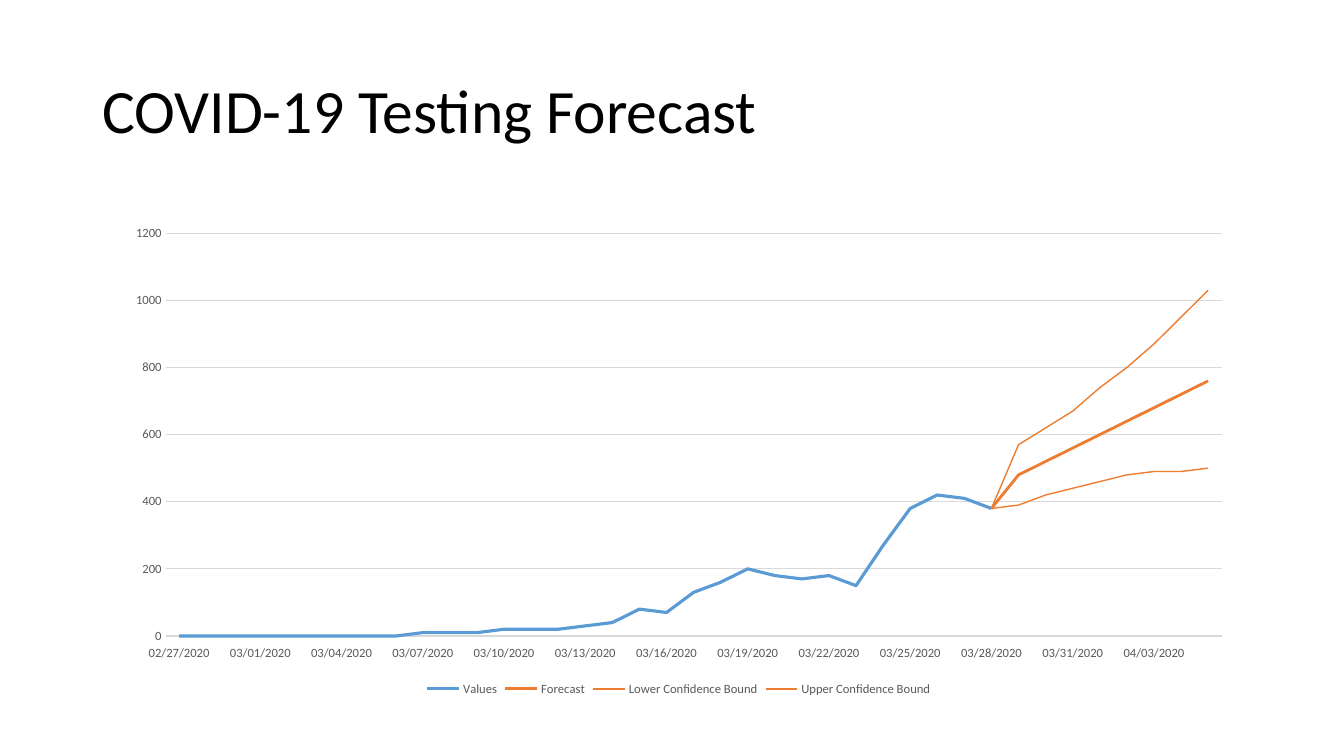
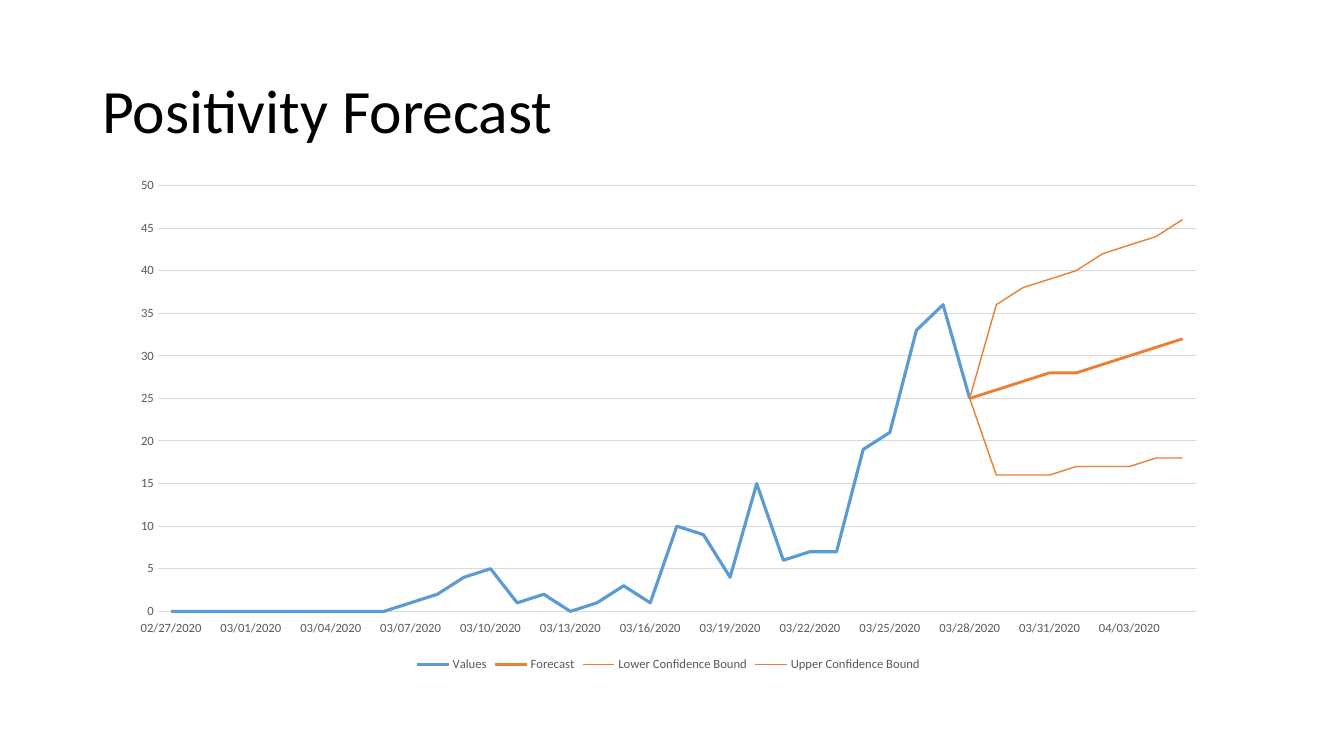
import pptx
import pptx.chart.data
import pptx.dml.color
import pptx.enum.chart
import pptx.enum.text
import pptx.oxml
import pptx.oxml.ns
import pptx.util

PX = 9525
FONT = "Calibri"
COLORS = {
    "title": "000000",
    "label": "595959",
    "grid": "D9D9D9",
    "values": "5B9BD5",
    "forecast": "ED7D31",
}
SERIES = [
    ("Values", "values", 2.25),
    ("Forecast", "forecast", 2),
    ("Lower Confidence Bound", "forecast", 1),
    ("Upper Confidence Bound", "forecast", 1),
]
FIRST_DAY = 43888
DAYS = range(FIRST_DAY, FIRST_DAY + 39)
DATE_FORMAT = "mm/dd/yyyy"
SLIDES = [
    {
        "title": "COVID-19 Testing Forecast",
        "box": (108, 206, 1077, 461),
        "axis": (1200, 200),
        "values": [0, 0, 0, 0, 0, 0, 0, 0, 0, 10, 10, 10, 20, 20, 20, 30,
                   40, 80, 70, 130, 160, 200, 180, 170, 180, 150, 270,
                   380, 420, 410, 380],
        "forecasts": [
            [480, 520, 560, 600, 640, 680, 720, 760],
            [390, 420, 440, 460, 480, 490, 490, 500],
            [570, 620, 670, 740, 800, 870, 950, 1030],
        ],
    },
    {
        "title": "Positivity Forecast",
        "box": (113, 160, 1047, 484),
        "axis": (50, 5),
        "values": [0, 0, 0, 0, 0, 0, 0, 0, 0, 1, 2, 4, 5, 1, 2, 0,
                   1, 3, 1, 10, 9, 4, 15, 6, 7, 7, 19, 21, 33, 36, 25],
        "forecasts": [
            [26, 27, 28, 28, 29, 30, 31, 32],
            [16, 16, 16, 17, 17, 17, 18, 18],
            [36, 38, 39, 40, 42, 43, 44, 46],
        ],
    },
]


def set_font(font, size, color):
    font.name = FONT
    font.size = pptx.util.Pt(size)
    font.color.rgb = pptx.dml.color.RGBColor.from_string(COLORS[color])


def set_line(line, width, color):
    line.width = pptx.util.Pt(width)
    line.color.rgb = pptx.dml.color.RGBColor.from_string(COLORS[color])


prs = pptx.Presentation()
prs.slide_width = 1280 * PX
prs.slide_height = 720 * PX

for content in SLIDES:
    s = prs.slides.add_slide(prs.slide_layouts[6])

    sp = s.shapes.add_textbox(*[n * PX for n in (88, 39, 1104, 139)])
    tf = sp.text_frame
    tf.word_wrap = True
    tf.vertical_anchor = pptx.enum.text.MSO_ANCHOR.MIDDLE
    p = tf.paragraphs[0]
    p.text = content["title"]
    p.line_spacing = 0.9
    set_font(p.runs[0].font, 44, "title")

    values = content["values"]
    gap = [None] * (len(values) - 1)
    rows = [values + [None] * (len(DAYS) - len(values))]
    rows += [gap + values[-1:] + row for row in content["forecasts"]]
    data = pptx.chart.data.CategoryChartData()
    data.categories = DAYS
    data.categories.number_format = DATE_FORMAT
    for (name, color, width), row in zip(SERIES, rows):
        data.add_series(name, row)

    chart = s.shapes.add_chart(
        pptx.enum.chart.XL_CHART_TYPE.LINE,
        *[n * PX for n in content["box"]], data).chart
    set_font(chart.font, 10, "title")
    chart.has_title = False
    chart.has_legend = True
    chart.legend.position = pptx.enum.chart.XL_LEGEND_POSITION.BOTTOM
    chart.legend.include_in_layout = False
    set_font(chart.legend.font, 9, "label")
    chart.plots[0].vary_by_categories = False

    for series, (name, color, width) in zip(chart.plots[0].series, SERIES):
        series.smooth = False
        set_line(series.format.line, width, color)

    dates, scale = chart.category_axis, chart.value_axis
    for axis in (dates, scale):
        axis.major_tick_mark = pptx.enum.chart.XL_TICK_MARK.NONE
        axis.minor_tick_mark = pptx.enum.chart.XL_TICK_MARK.NONE
        set_font(axis.tick_labels.font, 9, "label")

    dates.tick_label_position = pptx.enum.chart.XL_TICK_LABEL_POSITION.LOW
    dates.tick_labels.number_format = DATE_FORMAT
    dates.tick_labels.number_format_is_linked = False
    set_line(dates.format.line, 0.75, "grid")
    ax = dates._element
    ax.find(pptx.oxml.ns.qn("c:auto")).set("val", "1")
    body = ax.find(pptx.oxml.ns.qn("c:txPr")).find(pptx.oxml.ns.qn("a:bodyPr"))
    body.set("rot", "-60000000")
    body.set("vert", "horz")
    skip = pptx.oxml.parse_xml(
        f'<c:tickLblSkip {pptx.oxml.ns.nsdecls("c")} val="3"/>')
    ax.find(pptx.oxml.ns.qn("c:noMultiLvlLbl")).addprevious(skip)

    scale.minimum_scale = 0
    scale.maximum_scale, scale.major_unit = content["axis"]
    scale.format.line.fill.background()
    scale.has_major_gridlines = True
    set_line(scale.major_gridlines.format.line, 0.75, "grid")

prs.save("out.pptx")
